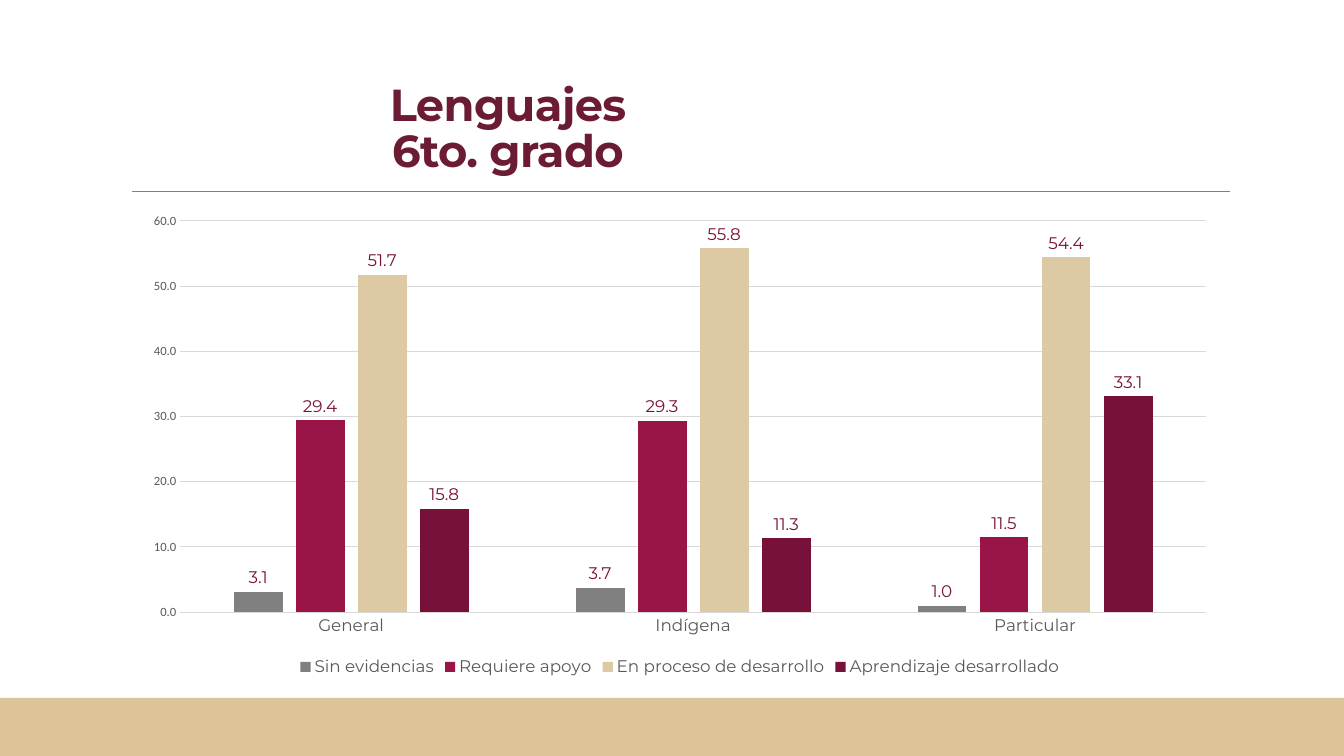
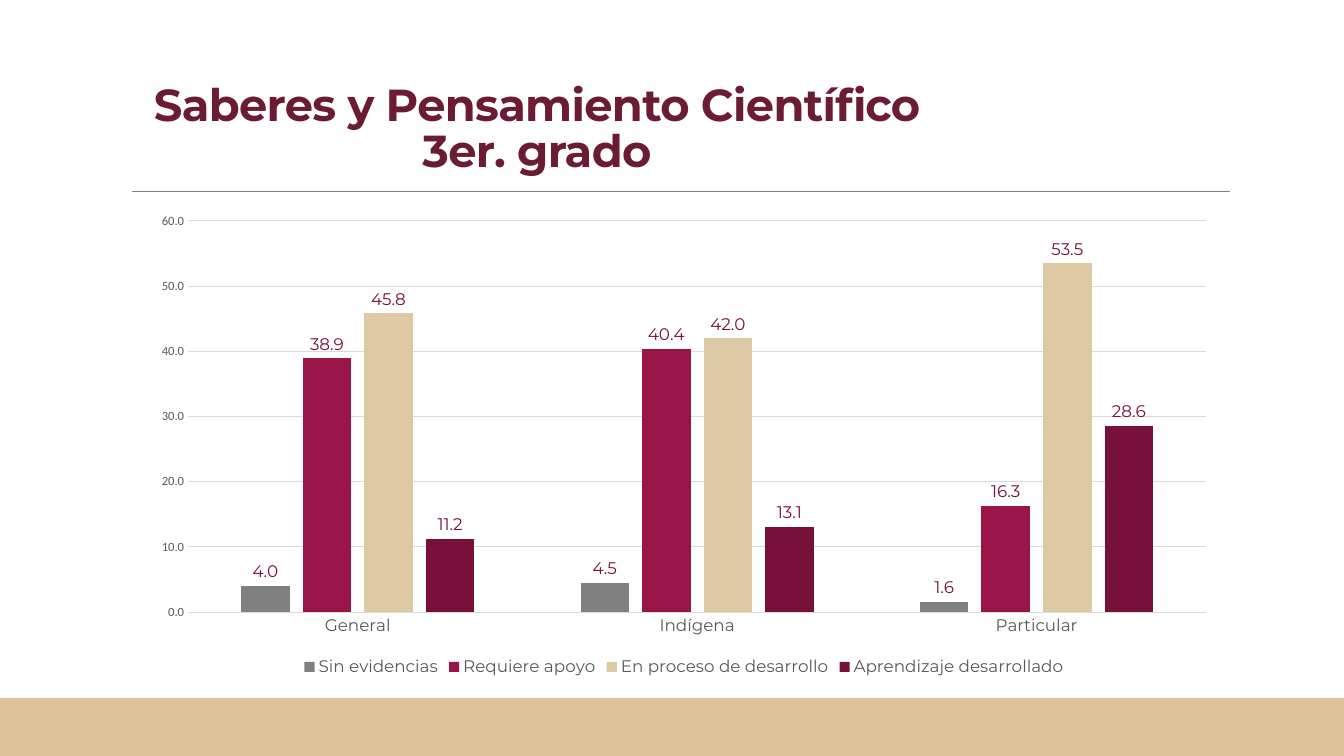
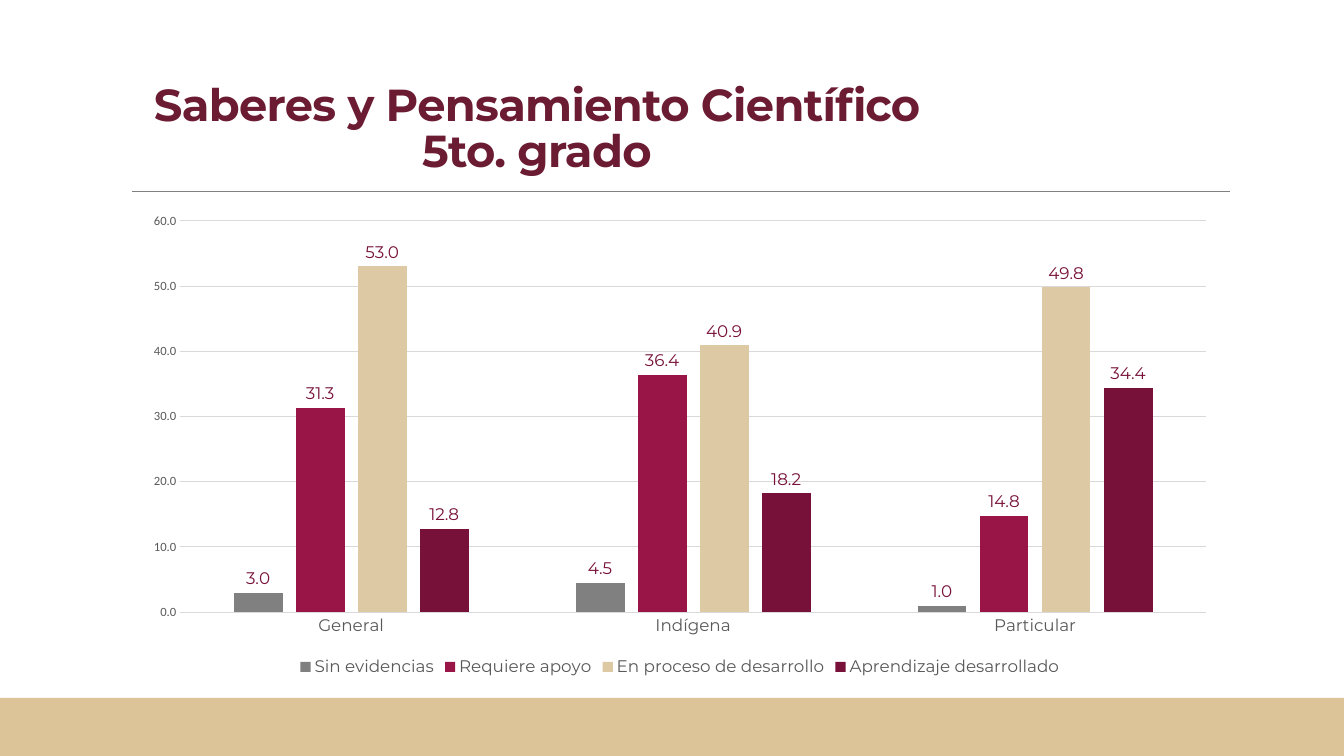
from lxml.etree import SubElement
from pptx import Presentation
from pptx.chart.data import CategoryChartData
from pptx.dml.color import RGBColor
from pptx.enum.chart import XL_CHART_TYPE, XL_LABEL_POSITION, XL_LEGEND_POSITION, XL_TICK_MARK
from pptx.enum.shapes import MSO_CONNECTOR, MSO_SHAPE
from pptx.enum.text import MSO_ANCHOR, MSO_AUTO_SIZE, PP_ALIGN
from pptx.oxml.ns import qn
from pptx.util import Emu, Pt

SLIDE_WIDTH, SLIDE_HEIGHT = 1344, 756
EMU_PER_PX = 12192000 / SLIDE_WIDTH
TITLE_ONLY = 5
HEADING_FONT, AXIS_FONT = "Montserrat", "Calibri"
WINE, LABEL_WINE, SAND = "6B1C32", "771139", "DDC398"
GRAY, TEXT_GRAY, GRID_GRAY = "808080", "595959", "D9D9D9"
CHART_RIGHT = 1228
CATEGORIES = ["General", "Indígena", "Particular"]
LEVELS = {
    "Sin evidencias": GRAY,
    "Requiere apoyo": "991547",
    "En proceso de desarrollo": "DDC9A3",
    "Aprendizaje desarrollado": LABEL_WINE,
}
RESULTS = [
    {
        "title": "Lenguajes\v6to. grado",
        "title_width": 814,
        "chart_left": 132,
        "rows": [[3.1, 3.7, 1.0], [29.4, 29.3, 11.5], [51.7, 55.8, 54.4], [15.8, 11.3, 33.1]],
    },
    {
        "title": "Saberes y Pensamiento Científico\v3er. grado",
        "title_width": 872,
        "chart_left": 140,
        "rows": [[4.0, 4.5, 1.6], [38.9, 40.4, 16.3], [45.8, 42.0, 53.5], [11.2, 13.1, 28.6]],
    },
    {
        "title": "Saberes y Pensamiento Científico\v5to. grado",
        "title_width": 872,
        "chart_left": 132,
        "rows": [[3.0, 4.5, 1.0], [31.3, 36.4, 14.8], [53.0, 40.9, 49.8], [12.8, 18.2, 34.4]],
    },
]


def px(length):
    return Emu(round(length * EMU_PER_PX))


def color(hex_string):
    return RGBColor.from_string(hex_string)


def format_font(font, name=HEADING_FONT, size=12, fill=TEXT_GRAY, bold=False):
    font.name = name
    font.size = Pt(size)
    font.bold = bold
    font.color.rgb = color(fill)


def format_line(line, fill, width):
    line.color.rgb = color(fill)
    line.width = Pt(width)


def write_text(shape, text, align=PP_ALIGN.CENTER, line_spacing=1.0, tracking=0, **font_format):
    frame = shape.text_frame
    frame.word_wrap = True
    frame.auto_size = MSO_AUTO_SIZE.NONE
    frame.vertical_anchor = MSO_ANCHOR.MIDDLE
    paragraph = frame.paragraphs[0]
    paragraph.text = text
    paragraph.alignment = align
    paragraph.line_spacing = line_spacing
    for run in paragraph.runs:
        format_font(run.font, **font_format)
        run.font._element.set("spc", str(round(tracking * 100)))


def add_band(slide, left, top, width, height, fill):
    band = slide.shapes.add_shape(
        MSO_SHAPE.RECTANGLE, px(left), px(top), px(width), px(height))
    band.shadow.inherit = False
    band.fill.solid()
    band.fill.fore_color.rgb = color(fill)
    band.line.fill.background()


def add_rule(slide, left, right, y):
    rule = slide.shapes.add_connector(
        MSO_CONNECTOR.STRAIGHT, px(left), px(y), px(right), px(y))
    format_line(rule.line, GRAY, 0.5)
    SubElement(rule._element.spPr, qn("a:effectLst"))


def place_title(slide, text, width):
    title = slide.shapes.title
    title.left, title.top, title.width, title.height = px(101), px(77), px(width), px(107)
    write_text(title, text, line_spacing=0.85, tracking=-0.5, size=32, fill=WINE, bold=True)


def format_axes(chart):
    category_axis, value_axis = chart.category_axis, chart.value_axis
    for axis in (category_axis, value_axis):
        axis.major_tick_mark = XL_TICK_MARK.NONE
        axis.minor_tick_mark = XL_TICK_MARK.NONE
    format_font(category_axis.tick_labels.font)
    format_line(category_axis.format.line, GRID_GRAY, 0.75)
    format_font(value_axis.tick_labels.font, name=AXIS_FONT, size=9)
    value_axis.tick_labels.number_format = "0.0"
    value_axis.tick_labels.number_format_is_linked = False
    value_axis.minimum_scale, value_axis.maximum_scale, value_axis.major_unit = 0, 60, 10
    value_axis.format.line.fill.background()
    format_line(value_axis.major_gridlines.format.line, GRID_GRAY, 0.75)


def format_series(series, fill):
    series.invert_if_negative = False
    series.format.fill.solid()
    series.format.fill.fore_color.rgb = color(fill)
    labels = series.data_labels
    labels.show_value = True
    labels.position = XL_LABEL_POSITION.OUTSIDE_END
    labels.number_format = "0.0"
    labels.number_format_is_linked = False
    format_font(labels.font, fill=LABEL_WINE)


def add_column_chart(slide, left, rows):
    data = CategoryChartData(number_format="0.0")
    data.categories = CATEGORIES
    for level, values in zip(LEVELS, rows):
        data.add_series(level, values)
    chart = slide.shapes.add_chart(
        XL_CHART_TYPE.COLUMN_CLUSTERED,
        px(left), px(204), px(CHART_RIGHT - left), px(477), data).chart
    chart.has_title = False
    format_font(chart.font, name=AXIS_FONT, size=10, fill="000000")
    chart.has_legend = True
    chart.legend.position = XL_LEGEND_POSITION.BOTTOM
    chart.legend.include_in_layout = False
    format_font(chart.legend.font)
    format_axes(chart)
    plot = chart.plots[0]
    plot.vary_by_categories = False
    plot.gap_width = 219
    plot.overlap = -27
    for series, fill in zip(plot.series, LEVELS.values()):
        format_series(series, fill)


def add_result_slide(presentation, title, title_width, chart_left, rows):
    slide = presentation.slides.add_slide(presentation.slide_layouts[TITLE_ONLY])
    add_rule(slide, 132, 1230, 191)
    add_band(slide, 0, 698, SLIDE_WIDTH, SLIDE_HEIGHT - 698, SAND)
    place_title(slide, title, title_width)
    add_column_chart(slide, chart_left, rows)


def main():
    presentation = Presentation()
    presentation.slide_width = px(SLIDE_WIDTH)
    presentation.slide_height = px(SLIDE_HEIGHT)
    for result in RESULTS:
        add_result_slide(presentation, **result)
    presentation.save("out.pptx")


if __name__ == "__main__":
    main()
